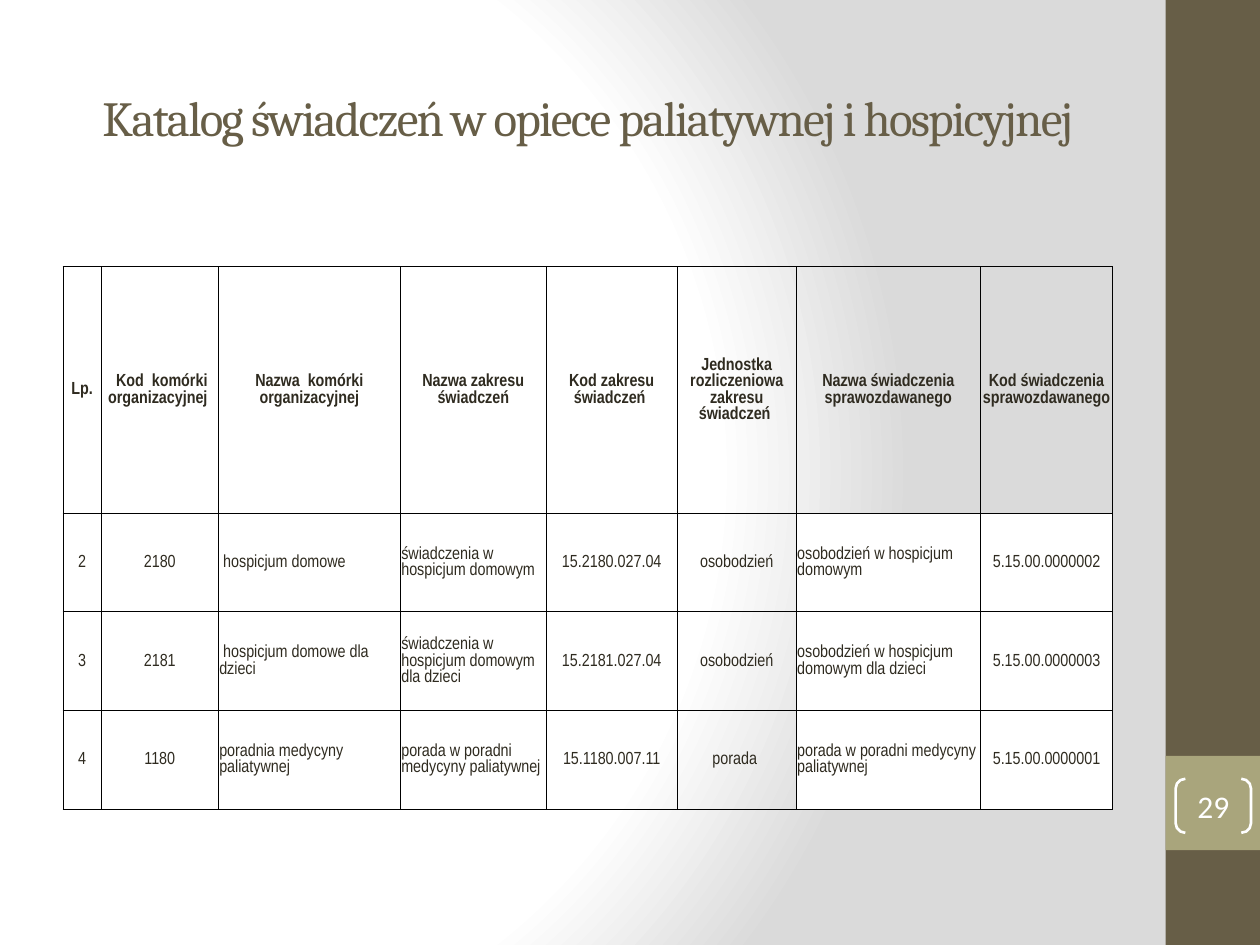
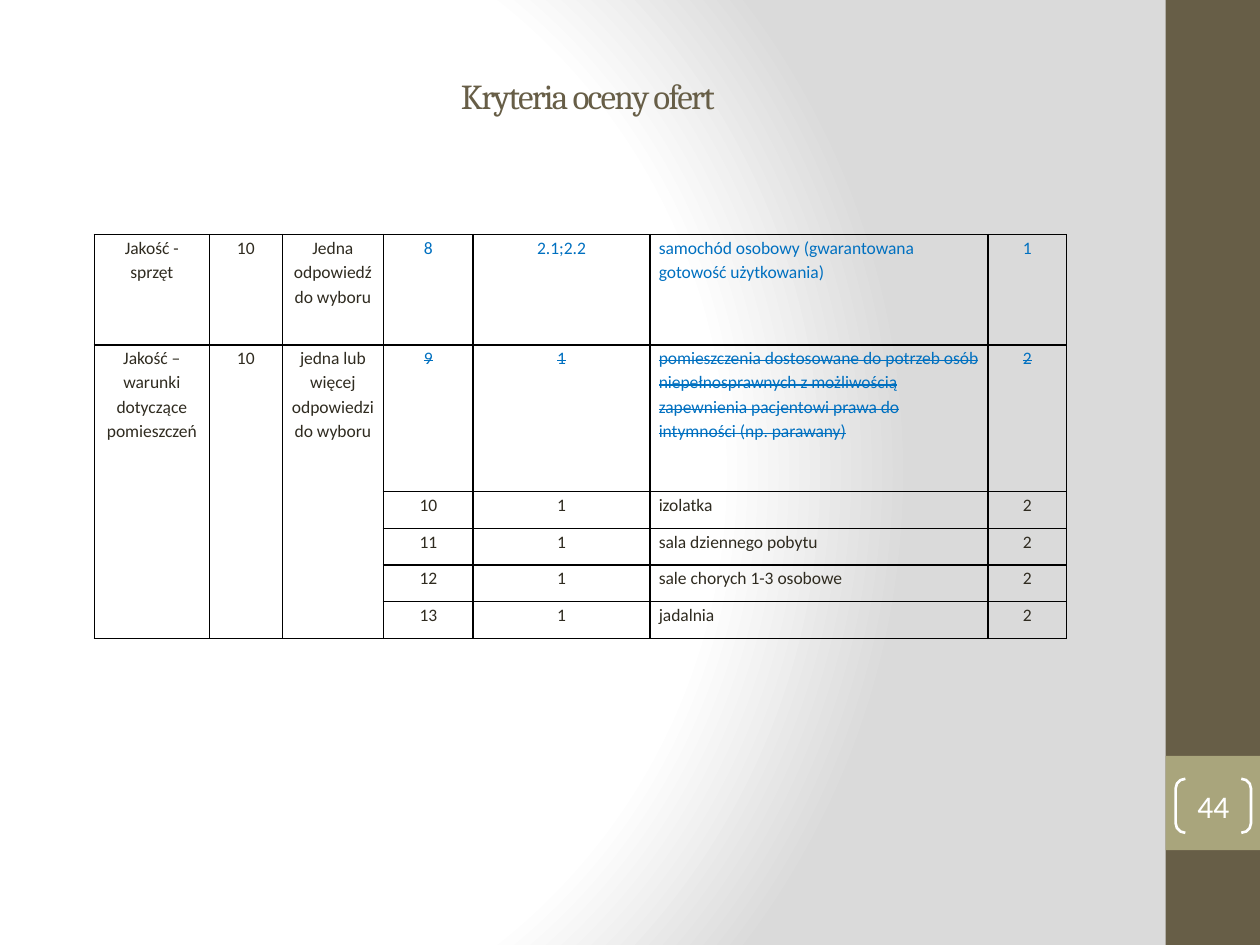
from lxml import etree
from pptx import Presentation
from pptx import util as u
from pptx.dml.color import RGBColor
from pptx.enum import shapes, text
from pptx.oxml.ns import qn

OLIVE, SAGE, WHITE, BLACK = "675E47", "A9A57C", "FFFFFF", "000000"
INK, BLUE = "2F2B20", "0070C0"
BACKDROP = [(0, WHITE), (75, WHITE), (100, "DADADA")]
FOCUS = dict(l=20, t=50, r=100, b=50)
BANDS = [(23.5, 0, 1.9, 19.05, OLIVE), (23.5, 15.24, 1.9, 1.9, SAGE)]

CATALOGUE = dict(
    left=1.27, top=3.32,
    cols=[0.77, 2.36, 3.67, 2.94, 2.64, 2.4, 3.71, 2.67],
    heights=[2.06, 4.96, 1.99, 1.99, 1.99],
    font="Arial Narrow", border=0.5, insets=(0.02, 0.02), spacing=None,
    anchor=text.MSO_ANCHOR.MIDDLE, merges=[(0, 0, 0, 7)],
    bold_rows=[1], left_cols=[2, 3, 6], first_body_row=2,
    white_cols=[2, 3, 6, 7], blue_rows=[], struck_rows=[], open_rows=[0],
    rows=[
        [None] * 8,
        ["Lp.", " Kod  komórki organizacyjnej ", "Nazwa  komórki organizacyjnej",
         "Nazwa zakresu świadczeń", "Kod zakresu świadczeń ",
         "Jednostka rozliczeniowa zakresu świadczeń ",
         "Nazwa świadczenia sprawozdawanego", "Kod świadczenia sprawozdawanego"],
        ["2", "2180", " hospicjum domowe", "świadczenia w hospicjum domowym",
         "15.2180.027.04", "osobodzień", "osobodzień w hospicjum domowym",
         "5.15.00.0000002"],
        ["3", "2181", " hospicjum domowe dla dzieci",
         "świadczenia w hospicjum domowym dla dzieci", "15.2181.027.04",
         "osobodzień", "osobodzień w hospicjum domowym dla dzieci",
         "5.15.00.0000003"],
        ["4", "1180", "poradnia medycyny paliatywnej",
         "porada w poradni medycyny paliatywnej", "15.1180.007.11", "porada ",
         "porada w poradni medycyny paliatywnej", "5.15.00.0000001"],
    ])

CRITERIA = dict(
    left=1.9, top=4.73,
    cols=[2.32, 1.47, 2.04, 1.81, 3.56, 6.82, 1.58],
    heights=[2.22, 2.96, 0.74, 0.74, 0.74, 0.74],
    font="Calibri", border=1, insets=(0.18, 0), spacing=1.15,
    anchor=text.MSO_ANCHOR.TOP, merges=[(1, c, 5, c) for c in range(3)],
    bold_rows=[], left_cols=[5], first_body_row=0,
    white_cols=[], blue_rows=[0, 1], struck_rows=[1], open_rows=[],
    rows=[
        ["Jakość - sprzęt", "10", "Jedna odpowiedź do wyboru", "8", "2.1;2.2",
         "samochód osobowy (gwarantowana gotowość użytkowania)", "1"],
        ["Jakość – warunki dotyczące pomieszczeń", "10",
         "jedna lub więcej odpowiedzi do wyboru", "9", "1",
         "pomieszczenia dostosowane do potrzeb osób niepełnosprawnych z możliwością "
         "zapewnienia pacjentowi prawa do intymności (np. parawany)", "2"],
        [None, None, None, "10", "1", "izolatka", "2"],
        [None, None, None, "11", "1", "sala dziennego pobytu", "2"],
        [None, None, None, "12", "1", "sale chorych 1-3 osobowe", "2"],
        [None, None, None, "13", "1", "jadalnia", "2"],
    ])
FIRST_ANSWER_COL = 3

# title, title size, extra space under the title, page number, table
SLIDES = [
    ("Katalog świadczeń w opiece paliatywnej i hospicyjnej", 28, 0, "29", CATALOGUE),
    ("Kryteria oceny ofert", 20, 0.83, "44", CRITERIA),
]


def rgb(value):
    return RGBColor.from_string(value)


def style_run(r, font, size, color, bold=False):
    r.font.name, r.font.size, r.font.bold = font, u.Pt(size), bold
    r.font.color.rgb = rgb(color)


def add_plain_shape(s, kind, left, top, width, height):
    sp = s.shapes.add_shape(kind, u.Cm(left), u.Cm(top), u.Cm(width), u.Cm(height))
    sp.shadow.inherit = False
    return sp


def set_backdrop(master):
    master.background.fill.gradient()
    grad = master.element.find(".//" + qn("a:gradFill"))
    for child in list(grad):
        grad.remove(child)
    stops = etree.SubElement(grad, qn("a:gsLst"))
    for pos, color in BACKDROP:
        stop = etree.SubElement(stops, qn("a:gs"), pos=str(pos * 1000))
        etree.SubElement(stop, qn("a:srgbClr"), val=color)
    circle = etree.SubElement(grad, qn("a:path"), path="circle")
    etree.SubElement(circle, qn("a:fillToRect"),
                     {side: str(v * 1000) for side, v in FOCUS.items()})


def add_bands(s, master):
    """Draw the side bands on s, then move them to the master."""
    for i, (*box, color) in enumerate(BANDS):
        sp = add_plain_shape(s, shapes.MSO_SHAPE.RECTANGLE, *box)
        sp.fill.solid()
        sp.fill.fore_color.rgb = rgb(color)
        sp.line.fill.background()
        sp.element.nvSpPr.cNvPr.set("id", str(20 + i))
        master.shapes.element.insert(2 + i, sp.element)


def set_title(s, title, size, space_below):
    tf = s.shapes.title.text_frame
    tf.text = title
    tf.vertical_anchor = text.MSO_ANCHOR.MIDDLE
    tf.margin_bottom = u.Cm(0.13 + space_below)
    p = tf.paragraphs[0]
    p.alignment = text.PP_ALIGN.CENTER
    style_run(p.runs[0], "Cambria", size, OLIVE)
    p.runs[0]._r.get_or_add_rPr().set("spc", "-100")


def add_page_number(s, number):
    sp = add_plain_shape(s, shapes.MSO_SHAPE.DOUBLE_BRACKET, 23.7, 15.7, 1.52, 1.09)
    sp.adjustments[0] = 0.18
    sp.fill.background()
    sp.line.color.rgb = rgb(WHITE)
    sp.line.width = u.Pt(1.5)
    tf = sp.text_frame
    tf.margin_left = tf.margin_right = tf.margin_top = tf.margin_bottom = 0
    tf.vertical_anchor = text.MSO_ANCHOR.MIDDLE
    tf.text = number
    tf.paragraphs[0].alignment = text.PP_ALIGN.CENTER
    style_run(tf.paragraphs[0].runs[0], "Calibri", 18, WHITE)


def set_borders(cell, width, hidden=()):
    tcPr = cell._tc.get_or_add_tcPr()
    for i, side in enumerate("LRTB"):
        ln = etree.Element(qn("a:ln" + side), w=str(u.Pt(width)))
        if side in hidden:
            etree.SubElement(ln, qn("a:noFill"))
        else:
            fill = etree.SubElement(ln, qn("a:solidFill"))
            etree.SubElement(fill, qn("a:srgbClr"), val=BLACK)
        tcPr.insert(i, ln)


def fill_cell(cell, value, row, col, t):
    side, top = t["insets"]
    cell.margin_left = cell.margin_right = u.Cm(side)
    cell.margin_top, cell.margin_bottom = u.Cm(top), 0
    cell.vertical_anchor = t["anchor"]
    if col in t["white_cols"] and row >= t["first_body_row"]:
        cell.fill.solid()
        cell.fill.fore_color.rgb = rgb(WHITE)
    else:
        cell.fill.background()
    set_borders(cell, t["border"], "LRT" if row in t["open_rows"] else "")
    p = cell.text_frame.paragraphs[0]
    if value is None:
        p._p.get_or_add_endParaRPr().set("sz", "1000")
        return
    p.text = value
    is_left = col in t["left_cols"] and row >= t["first_body_row"]
    p.alignment = text.PP_ALIGN.LEFT if is_left else text.PP_ALIGN.CENTER
    if t["spacing"]:
        p.line_spacing = t["spacing"]
    r = p.runs[0]
    is_answer = col >= FIRST_ANSWER_COL
    color = BLUE if is_answer and row in t["blue_rows"] else INK
    style_run(r, t["font"], 10, color, row in t["bold_rows"])
    if is_answer and row in t["struck_rows"]:
        r._r.get_or_add_rPr().set("strike", "sngStrike")


def add_grid(s, t):
    cols, heights = t["cols"], t["heights"]
    table = s.shapes.add_table(len(heights), len(cols), u.Cm(t["left"]), u.Cm(t["top"]),
                               u.Cm(sum(cols)), u.Cm(sum(heights))).table
    table.first_row = table.horz_banding = False
    for column, width in zip(table.columns, cols):
        column.width = u.Cm(width)
    for row, height in zip(table.rows, heights):
        row.height = u.Cm(height)
    for top, left, bottom, right in t["merges"]:
        table.cell(top, left).merge(table.cell(bottom, right))
    for i, values in enumerate(t["rows"]):
        for j, value in enumerate(values):
            fill_cell(table.cell(i, j), value, i, j, t)


def main():
    prs = Presentation()
    prs.slide_width, prs.slide_height = u.Cm(25.4), u.Cm(19.05)
    master, layout = prs.slide_master, prs.slide_layouts[5]
    set_backdrop(master)
    title_box = layout.placeholders[0]
    title_box.left, title_box.top = u.Cm(1.27), u.Cm(0.76)
    title_box.width, title_box.height = u.Cm(21.16), u.Cm(3.18)
    for i, (title, size, space_below, number, table) in enumerate(SLIDES):
        s = prs.slides.add_slide(layout)
        if i == 0:
            add_bands(s, master)
        set_title(s, title, size, space_below)
        add_page_number(s, number)
        add_grid(s, table)
    prs.save("out.pptx")


if __name__ == "__main__":
    main()
